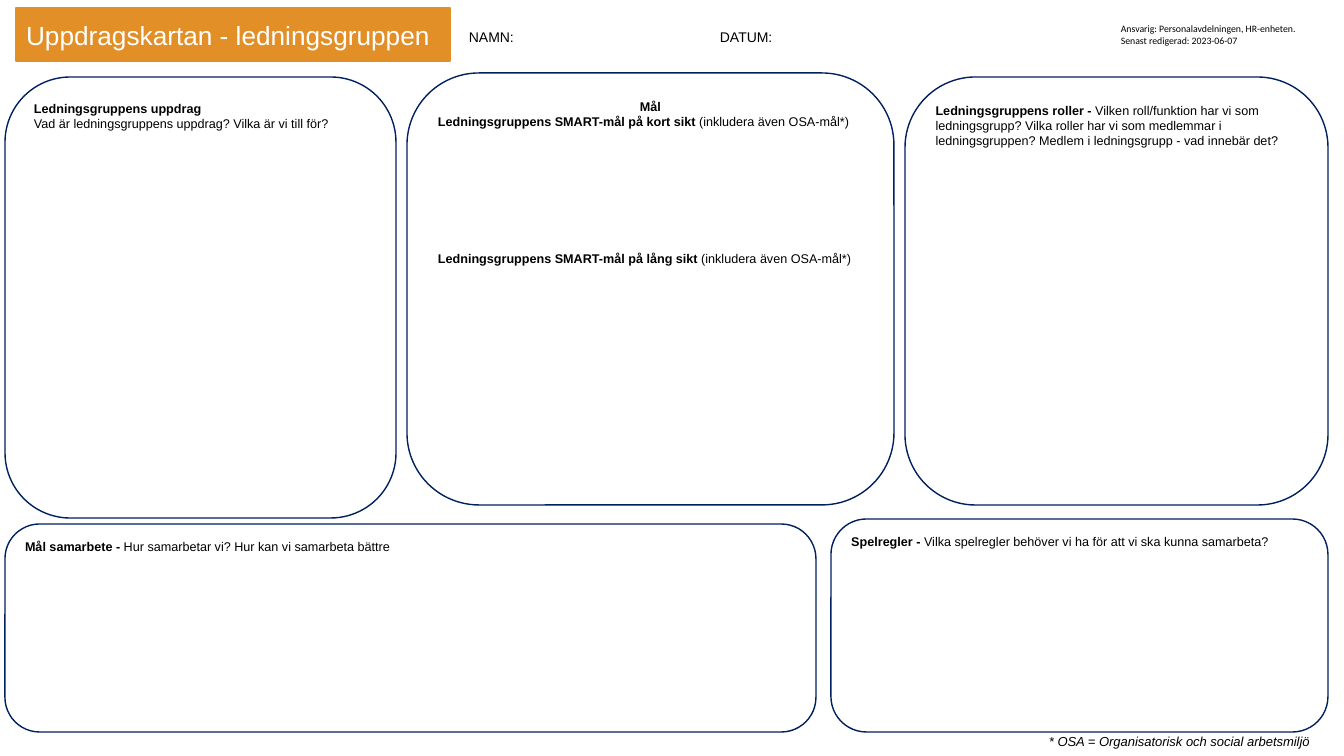
import pptx
import pptx.dml.color
import pptx.enum.shapes
import pptx.enum.text
import pptx.oxml
import pptx.util
import lxml.etree

PX = 12192000 / 1344
COLORS = {"orange": "E28F27", "navy": "002060", "white": "FFFFFF", "black": "000000"}
LEFT = pptx.enum.text.PP_ALIGN.LEFT
CENTER = pptx.enum.text.PP_ALIGN.CENTER
ROUNDED = pptx.enum.shapes.MSO_SHAPE.ROUNDED_RECTANGLE


def color(name):
    return pptx.dml.color.RGBColor.from_string(COLORS[name])


def add_run(paragraph, text, size, bold=False, italic=False, font="Arial", ink="black"):
    run = paragraph.add_run()
    run.text = text
    run.font.name = font
    run.font.size = pptx.util.Pt(size)
    run.font.bold = bold
    run.font.italic = italic
    run.font.color.rgb = color(ink)


presentation = pptx.Presentation()
presentation.slide_width = round(1344 * PX)
presentation.slide_height = round(756 * PX)
slide = presentation.slides.add_slide(presentation.slide_layouts[5])

# Title
title = slide.shapes.title
title.left, title.top, title.width, title.height = [round(v * PX) for v in (16, 8, 434, 53)]
title._element.spPr.append(pptx.oxml.parse_xml(
    '<a:prstGeom xmlns:a="http://schemas.openxmlformats.org/drawingml/2006/main"'
    ' prst="roundRect"><a:avLst/></a:prstGeom>'))
title.fill.solid()
title.fill.fore_color.rgb = color("orange")
title.line.color.rgb = color("orange")
title.line.width = pptx.util.Pt(1)
title.text_frame.auto_size = pptx.enum.text.MSO_AUTO_SIZE.NONE
title.text_frame.vertical_anchor = pptx.enum.text.MSO_ANCHOR.MIDDLE
title.text_frame.paragraphs[0].alignment = LEFT
add_run(title.text_frame.paragraphs[0], "Uppdragskartan - ledningsgruppen", 18.7, ink="white")

# Panels: box in px, then paragraphs of (alignment, space before in pt, bold text, plain text)
panels = [
    ((407, 73, 487, 432), [
        (CENTER, 0, "Mål", ""),
        (LEFT, 0, "Ledningsgruppens SMART-mål på kort sikt ", "(inkludera även OSA-mål*)"),
        (LEFT, 87, "Ledningsgruppens SMART-mål på lång sikt ", "(inkludera även OSA-mål*)")]),
    ((5, 77, 391, 441), [
        (LEFT, 0, "Ledningsgruppens uppdrag", ""),
        (LEFT, 0, "", "Vad är ledningsgruppens uppdrag? Vilka är vi till för?")]),
    ((905, 77, 423, 428), [
        (LEFT, 0, "Ledningsgruppens roller - ",
         "Vilken roll/funktion har vi som ledningsgrupp? Vilka roller har vi som medlemmar i "
         "ledningsgruppen? Medlem i ledningsgrupp - vad innebär det?")]),
    ((5, 524, 811, 208), [
        (LEFT, 0, "Mål samarbete - ", "Hur samarbetar vi? Hur kan vi samarbeta bättre")]),
    ((831, 519, 497, 213), [
        (LEFT, 0, "Spelregler - ",
         "Vilka spelregler behöver vi ha för att vi ska kunna samarbeta?")]),
]
for box, lines in panels:
    panel = slide.shapes.add_shape(ROUNDED, *[round(v * PX) for v in box])
    panel.shadow.inherit = False
    panel.fill.solid()
    panel.fill.fore_color.rgb = color("white")
    panel.line.color.rgb = color("navy")
    panel.line.width = pptx.util.Pt(1)
    frame = panel.text_frame
    frame.word_wrap = True
    frame.vertical_anchor = pptx.enum.text.MSO_ANCHOR.TOP
    for index, (alignment, space, bold_text, plain_text) in enumerate(lines):
        paragraph = frame.add_paragraph() if index else frame.paragraphs[0]
        paragraph.alignment = alignment
        if space:
            paragraph.space_before = pptx.util.Pt(space)
        for text, bold in ((bold_text, True), (plain_text, False)):
            if text:
                add_run(paragraph, text, 9, bold)

# Labels: box in px, wrapping, font, size, italic, lines
labels = [
    ((459, 24, 458, 27), True, "Arial", 10, False, ["NAMN:\tDATUM:"]),
    ((1111, 18, 222, 39), True, "Calibri", 7, False,
     ["Ansvarig: Personalavdelningen, HR-enheten.", "Senast redigerad: 2023-06-07"]),
    ((1039, 729, 288, 26), False, "Arial", 9.3, True,
     ["* OSA = Organisatorisk och social arbetsmiljö"]),
]
for box, wrap, font, size, italic, lines in labels:
    label = slide.shapes.add_textbox(*[round(v * PX) for v in box])
    label.text_frame.word_wrap = wrap
    for index, text in enumerate(lines):
        paragraph = label.text_frame.add_paragraph() if index else label.text_frame.paragraphs[0]
        if "\t" in text:
            properties = paragraph._p.get_or_add_pPr()
            namespace = "{http://schemas.openxmlformats.org/drawingml/2006/main}"
            tabs = lxml.etree.SubElement(properties, namespace + "tabLst")
            lxml.etree.SubElement(tabs, namespace + "tab", pos=str(round(251 * PX)), algn="l")
        add_run(paragraph, text, size, italic=italic, font=font)

presentation.save("out.pptx")
